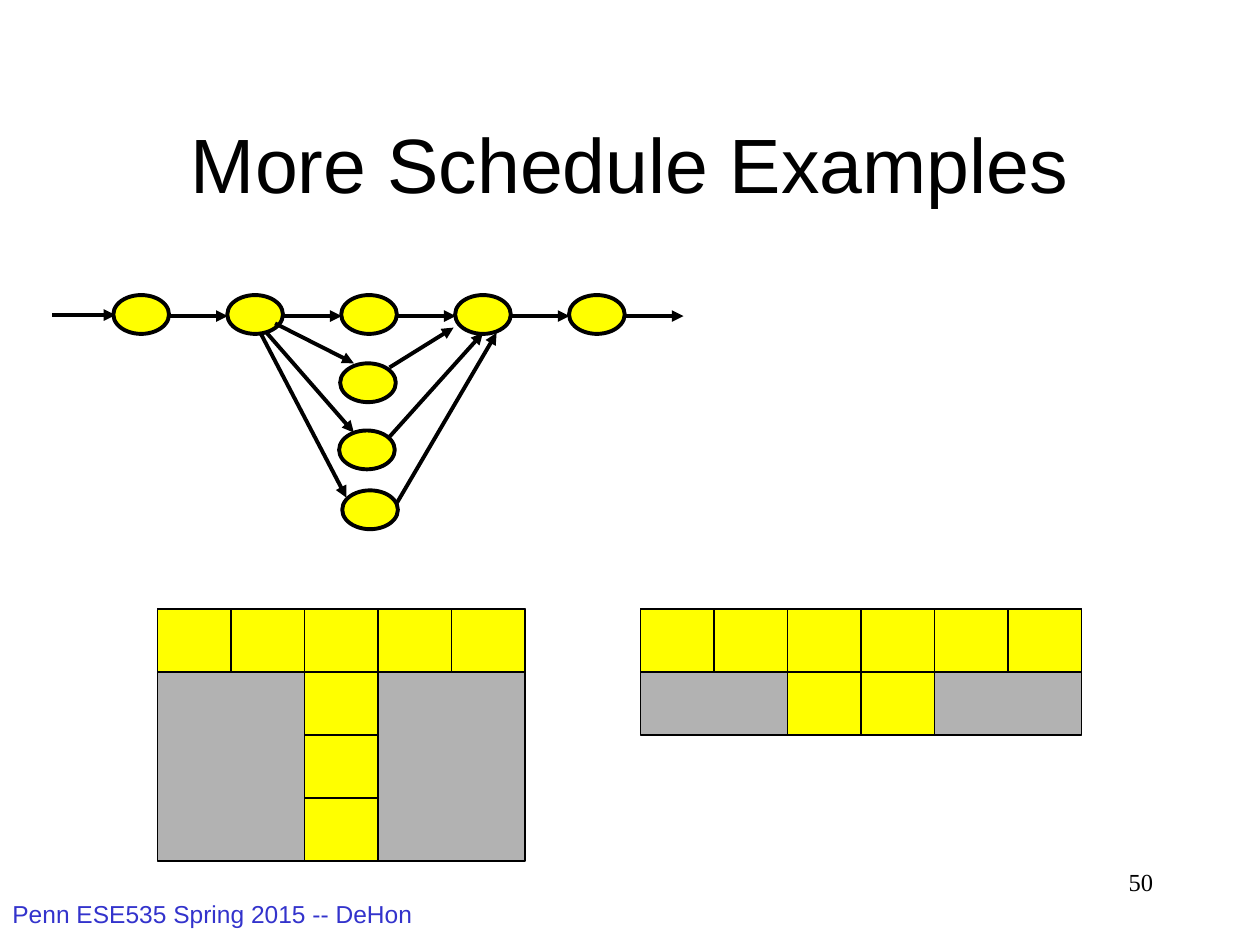
from lxml.etree import SubElement
from pptx import Presentation
from pptx.dml.color import RGBColor
from pptx.enum.shapes import MSO_CONNECTOR, MSO_SHAPE
from pptx.enum.text import MSO_ANCHOR, PP_ALIGN
from pptx.oxml.ns import qn
from pptx.util import Inches, Pt

COLORS = {"ink": "000000", "footer": "3333CC", "busy": "FFFF00", "idle": "B2B2B2"}
COLUMNS, ROWS = 120, 90


class Deck:
    def __init__(self):
        self.show = Presentation()
        self.show.slide_width, self.show.slide_height = Inches(10), Inches(7.5)
        self.slide = self.show.slides.add_slide(self.show.slide_layouts[6])
        self.shapes = self.slide.shapes

    def place(self, column, row):
        return (round(column * self.show.slide_width / COLUMNS),
                round(row * self.show.slide_height / ROWS))

    def group(self):
        self.shapes = self.slide.shapes.add_group_shape().shapes

    def text(self, words, at, size, color="ink", font="Arial",
             align=PP_ALIGN.LEFT, anchor=MSO_ANCHOR.TOP):
        frame = self.slide.shapes.add_textbox(
            *self.place(*at[:2]), *self.place(*at[2:])).text_frame
        frame.word_wrap = True
        frame.vertical_anchor = anchor
        paragraph = frame.paragraphs[0]
        paragraph.alignment = align
        run = paragraph.add_run()
        run.text = words
        run.font.size = Pt(size)
        run.font.name = font
        run.font.color.rgb = RGBColor.from_string(COLORS[color])

    def block(self, preset, at, fill, weight):
        block = self.shapes.add_shape(preset, *self.place(*at[:2]), *self.place(*at[2:]))
        block.shadow.inherit = False
        block.fill.solid()
        block.fill.fore_color.rgb = RGBColor.from_string(COLORS[fill])
        block.line.color.rgb = RGBColor.from_string(COLORS["ink"])
        block.line.width = Pt(weight)

    def node(self, column, row):
        self.block(MSO_SHAPE.OVAL, (column, row, 5.3, 3.7), "busy", 2.25)

    def arrow(self, start, end):
        arrow = self.shapes.add_connector(
            MSO_CONNECTOR.STRAIGHT, *self.place(*start), *self.place(*end))
        arrow.line.color.rgb = RGBColor.from_string(COLORS["ink"])
        arrow.line.width = Pt(2.25)
        properties = arrow.element.spPr
        SubElement(properties.find(qn("a:ln")), qn("a:tailEnd"), type="triangle")
        SubElement(properties, qn("a:effectLst"))

    def schedule(self, left, top, resources):
        width, height = 7, 6
        steps = max(max(busy) for busy in resources) + 1
        self.group()
        self.block(MSO_SHAPE.RECTANGLE,
                   (left, top, steps * width, len(resources) * height), "idle", 0.75)
        for row, busy in enumerate(resources):
            for step in busy:
                self.block(MSO_SHAPE.RECTANGLE,
                           (left + step * width, top + row * height, width, height),
                           "busy", 0.75)


def main():
    deck = Deck()
    deck.text("Penn ESE535 Spring 2015 -- DeHon", (0, 85, 46, 5), 14, "footer")
    deck.text("50", (86, 82, 25, 6), 14, font="Times New Roman", align=PP_ALIGN.RIGHT)
    deck.text("More Schedule Examples", (9, 8, 102, 15), 44,
              align=PP_ALIGN.CENTER, anchor=MSO_ANCHOR.MIDDLE)

    deck.group()
    deck.arrow((5, 30), (11, 30))
    for stage in range(5):
        column = 10.8 + 10.85 * stage
        deck.node(column, 28.1)
        deck.arrow((column + 5.4, 30.1), (column + 10.9, 30.1))

    branches = [
        ((32.4, 34.6), (26.2, 30.8), (33.7, 34.6), (37.1, 35), (43.2, 31.2)),
        ((32.3, 41), (25.4, 31.7), (33.7, 41.2), (37.1, 41.6), (46, 31.7)),
        ((32.6, 46.7), (24.8, 31.7), (33, 47.4), (37.8, 47.9), (47.3, 31.7)),
    ]
    for node, fork, arrival, departure, join in branches:
        deck.node(*node)
        deck.arrow(fork, arrival)
        deck.arrow(departure, join)

    deck.schedule(15, 58, [range(5), [2], [2], [2]])
    deck.schedule(61, 58, [range(6), [2, 3]])
    deck.show.save("out.pptx")


if __name__ == "__main__":
    main()
